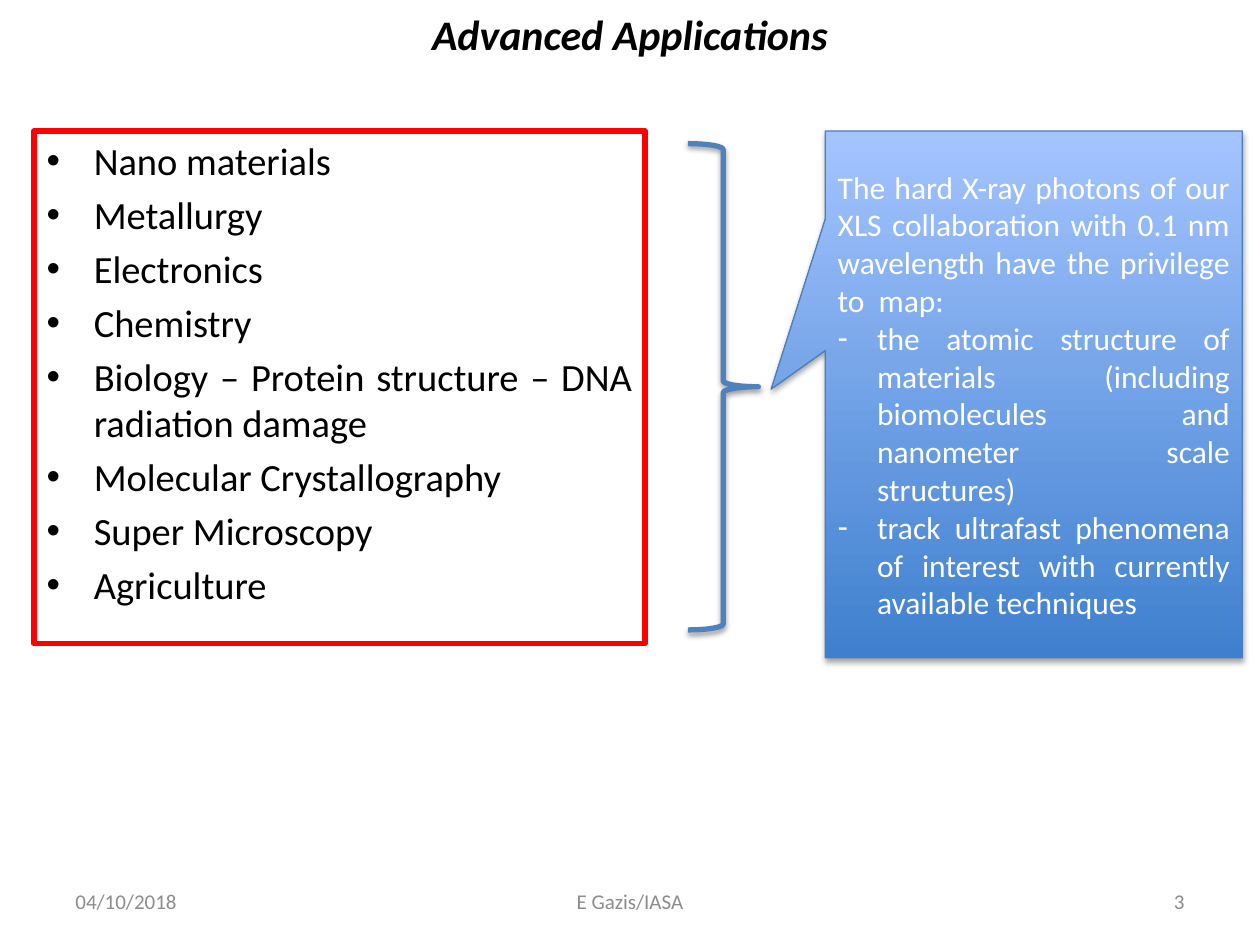
from lxml.etree import SubElement
from pptx import Presentation
from pptx.dml.color import RGBColor
from pptx.enum.shapes import MSO_SHAPE
from pptx.enum.text import MSO_ANCHOR, MSO_AUTO_SIZE, PP_ALIGN
from pptx.oxml.ns import qn
from pptx.util import Pt

APPLICATIONS = [
    "Nano materials",
    "Metallurgy",
    "Electronics",
    "Chemistry",
    "Biology – Protein structure – DNA radiation damage",
    "Molecular Crystallography",
    "Super Microscopy",
    "Agriculture",
]
PRIVILEGE = ("The hard X-ray photons of our XLS collaboration with 0.1 nm "
             "wavelength have the privilege to  map:")
MAPPED = [
    "the atomic structure of materials (including biomolecules and "
    "nanometer scale structures)",
    "track ultrafast phenomena of interest with currently available techniques",
]
FOOTERS = [
    ("04/10/2018", 36, 168, PP_ALIGN.LEFT),
    ("E Gazis/IASA", 246, 228, PP_ALIGN.CENTER),
    ("3", 516, 168, PP_ALIGN.RIGHT),
]


def rgb(value):
    return RGBColor.from_string(value)


def place(shape, left, top, width, height):
    frame = {"left": left, "top": top, "width": width, "height": height}
    for name, length in frame.items():
        setattr(shape, name, Pt(length))


def set_frame(shape, anchor):
    settings = {"word_wrap": True, "auto_size": MSO_AUTO_SIZE.NONE,
                "vertical_anchor": anchor}
    for name, value in settings.items():
        setattr(shape.text_frame, name, value)


def add_bullet(paragraph, mark, indent):
    properties = paragraph._p.get_or_add_pPr()
    properties.set("marL", str(Pt(indent)))
    properties.set("indent", str(-Pt(indent)))
    SubElement(properties, qn("a:buFont"), typeface="Arial")
    SubElement(properties, qn("a:buChar"), char=mark)


def write(paragraph, text, color, align, **font_values):
    paragraph.alignment = align
    run = paragraph.add_run()
    run.text = text
    run.font.color.rgb = rgb(color)
    for name, value in {"name": "Calibri", **font_values}.items():
        setattr(run.font, name, value)


def set_line(shape, color, width):
    shape.line.color.rgb = rgb(color)
    shape.line.width = Pt(width)


def add_shadow(shape, distance, opacity):
    shape.shadow.inherit = False
    effects = shape._element.spPr.find(qn("a:effectLst"))
    shadow = SubElement(effects, qn("a:outerShdw"), blurRad=str(Pt(3.1)),
                        dist=str(Pt(distance)), dir="5400000", rotWithShape="0")
    black = SubElement(shadow, qn("a:srgbClr"), val="000000")
    SubElement(black, qn("a:alpha"), val=str(opacity * 1000))


def fill_title(title):
    place(title, 36, 0.7, 648, 36.7)
    set_frame(title, MSO_ANCHOR.MIDDLE)
    write(title.text_frame.paragraphs[0], "Advanced Applications", "000000",
          PP_ALIGN.CENTER, size=Pt(24), bold=True, italic=True)


def fill_applications(body):
    place(body, 19.4, 74.9, 349.2, 293)
    set_frame(body, MSO_ANCHOR.TOP)
    set_line(body, "FF0000", 3)
    frame = body.text_frame
    for number, application in enumerate(APPLICATIONS):
        paragraph = frame.add_paragraph() if number else frame.paragraphs[0]
        add_bullet(paragraph, "•", 27)
        write(paragraph, application, "000000", PP_ALIGN.JUSTIFY, size=Pt(22))
    frame.paragraphs[0].space_before = Pt(0)


def add_footer(slide, text, left, width, align):
    footer = slide.shapes.add_textbox(Pt(left), Pt(500.5), Pt(width), Pt(28.8))
    set_frame(footer, MSO_ANCHOR.MIDDLE)
    write(footer.text_frame.paragraphs[0], text, "8C8C8C", align, size=Pt(12))


def add_callout(slide):
    callout = slide.shapes.add_shape(MSO_SHAPE.RECTANGULAR_CALLOUT, Pt(471.6),
                                     Pt(74.9), Pt(238.3), Pt(301))
    callout.adjustments[0] = -0.63
    callout.adjustments[1] = -0.01
    callout.fill.gradient()
    callout.fill.gradient_angle = 90
    for stop, color in zip(callout.fill.gradient_stops, ("3F80CE", "A4C4FF")):
        stop.color.rgb = rgb(color)
    set_line(callout, "4B7EBC", 0.75)
    add_shadow(callout, 1.8, 35)
    set_frame(callout, MSO_ANCHOR.MIDDLE)
    frame = callout.text_frame
    style = {"color": "FFFFFF", "align": PP_ALIGN.JUSTIFY, "size": Pt(18)}
    write(frame.paragraphs[0], PRIVILEGE, **style)
    for target in MAPPED:
        paragraph = frame.add_paragraph()
        add_bullet(paragraph, "-", 22.5)
        write(paragraph, target, **style)


def add_brace(slide):
    brace = slide.shapes.add_shape(MSO_SHAPE.RIGHT_BRACE, Pt(393.1), Pt(82.1),
                                   Pt(40.3), Pt(277.9))
    brace.fill.background()
    set_line(brace, "4F81BD", 3)
    add_shadow(brace, 1.6, 38)


def main():
    deck = Presentation()
    deck.slide_width, deck.slide_height = Pt(720), Pt(540)
    slide = deck.slides.add_slide(deck.slide_layouts[1])

    # Title and list of applications
    fill_title(slide.shapes.title)
    fill_applications(slide.placeholders[1])

    # Date, author and page number
    for footer in FOOTERS:
        add_footer(slide, *footer)

    # What the photons make possible
    add_callout(slide)
    add_brace(slide)

    deck.save("out.pptx")


if __name__ == "__main__":
    main()
